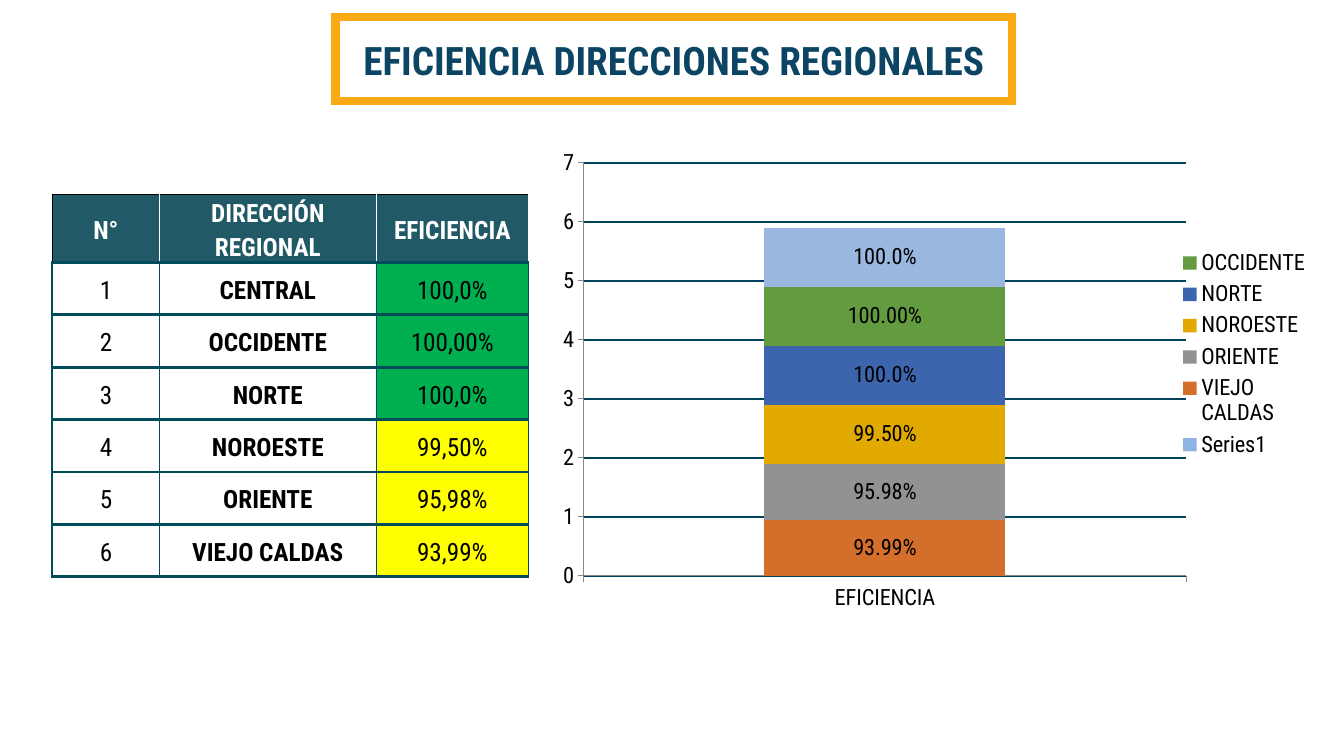
from dataclasses import dataclass

from lxml import etree
from pptx import Presentation
from pptx import util as u
from pptx.chart.data import CategoryChartData
from pptx.dml.color import RGBColor
from pptx.enum import chart as charts, shapes, text
from pptx.oxml import parse_xml
from pptx.oxml.ns import nsdecls, qn


@dataclass(frozen=True)
class Theme:
    """Colours, font and type sizes of the slide."""
    font: str = "Roboto Condensed"
    title_size: int = 28
    table_size: int = 18
    chart_size: int = 16
    title: str = "0C4563"
    frame: str = "F8A913"
    header: str = "215967"
    border: str = "004C5A"
    grid: str = "00415B"
    axis: str = "868686"
    black: str = "000000"
    white: str = "FFFFFF"
    good: str = "00B050"
    fair: str = "FFFF00"


@dataclass(frozen=True)
class Box:
    """A rectangle in centimetres."""
    left: float
    top: float
    width: float
    height: float

    def place(self):
        """Return the four lengths in slide units."""
        return [u.Cm(side) for side in (self.left, self.top, self.width, self.height)]


THEME = Theme()
REGIONS = [
    ("CENTRAL", "100,0%", THEME.good),
    ("OCCIDENTE", "100,00%", THEME.good),
    ("NORTE", "100,0%", THEME.good),
    ("NOROESTE", "99,50%", THEME.fair),
    ("ORIENTE", "95,98%", THEME.fair),
    ("VIEJO CALDAS", "93,99%", THEME.fair),
]
SERIES = [
    ("Series1", None, "8EB4E3", "0.0%"),
    ("VIEJO CALDAS", 0.9399, "D46F2B", "0.00%"),
    ("ORIENTE", 0.9598, "929292", "0.00%"),
    ("NOROESTE", 0.995, "E2AA00", "0.00%"),
    ("NORTE", 1, "3D65AD", "0.0%"),
    ("OCCIDENTE", 1, "629B40", "0.00%"),
    ("CENTRAL", 1, "99B7DF", "0.0%"),
]


def set_font(font, size, color, bold=False):
    """Apply the theme font with a size, colour and weight."""
    font.name, font.size, font.bold = THEME.font, u.Pt(size), bold
    font.color.rgb = RGBColor.from_string(color)


def set_line(line, color, width):
    """Give a line a solid colour and a width in points."""
    line.color.rgb = RGBColor.from_string(color)
    line.width = u.Pt(width)


def add_title(slide, box):
    """Draw the framed title inside the box."""
    frame = slide.shapes.add_shape(shapes.MSO_SHAPE.RECTANGLE, *box.place())
    frame.shadow.inherit = False
    frame.fill.background()
    set_line(frame.line, THEME.frame, 6)
    etree.SubElement(frame.line._ln, qn("a:miter"), lim="800000")

    title = slide.shapes.title
    inner = Box(box.left - 0.5, box.top + 0.45, box.width + 1, 1.4)
    title.left, title.top, title.width, title.height = inner.place()
    title.text_frame.text = "EFICIENCIA DIRECCIONES REGIONALES"
    title.text_frame.auto_size = text.MSO_AUTO_SIZE.NONE
    title.text_frame.vertical_anchor = text.MSO_ANCHOR.MIDDLE
    para = title.text_frame.paragraphs[0]
    para.alignment = text.PP_ALIGN.CENTER
    para.line_spacing = 0.9
    set_font(para.font, THEME.title_size, THEME.title, True)


def set_borders(cell, borders):
    """Draw the left, right, top and bottom borders of a cell."""
    for index, (side, (color, width)) in enumerate(zip("LRTB", borders)):
        cell._tc.get_or_add_tcPr().insert(index, parse_xml(
            f'<a:ln{side} {nsdecls("a")} w="{u.Pt(width)}"><a:solidFill>'
            f'<a:srgbClr val="{color}"/></a:solidFill></a:ln{side}>'))


def fill_cell(cell, content, color, bold, fill, borders):
    """Write and format one table cell."""
    cell.text = content
    cell.vertical_anchor = text.MSO_ANCHOR.MIDDLE
    cell.margin_left = cell.margin_right = u.Cm(0.18)
    cell.margin_top = cell.margin_bottom = 0
    para = cell.text_frame.paragraphs[0]
    para.alignment = text.PP_ALIGN.CENTER
    para.line_spacing = 1.15
    set_font(para.font, THEME.table_size, color, bold)
    if fill:
        cell.fill.solid()
        cell.fill.fore_color.rgb = RGBColor.from_string(fill)
    else:
        cell.fill.background()
    set_borders(cell, borders)


def add_region_table(slide, box):
    """Draw the table of regions and their efficiency."""
    headers = ["N°", "DIRECCIÓN REGIONAL", "EFICIENCIA"]
    table = slide.shapes.add_table(len(REGIONS) + 1, len(headers), *box.place()).table
    table.horz_banding = False
    for column, share in zip(table.columns, (0.225, 0.455, 0.32)):
        column.width = u.Cm(box.width * share)
    for row in table.rows:
        row.height = u.Cm(1.32)
    table.rows[0].height = u.Cm(1.22)

    thin, thick = (THEME.border, 1), (THEME.border, 2.25)
    black, white = (THEME.black, 1), (THEME.white, 1)
    for index, header in enumerate(headers):
        borders = [white if index else black, white, black, thick]
        fill_cell(table.cell(0, index), header, THEME.white, True, THEME.header, borders)
    for number, (region, efficiency, fill) in enumerate(REGIONS, 1):
        for index, content in enumerate((str(number), region, efficiency)):
            left = thin if index else (THEME.border, 1.5)
            fill_cell(table.cell(number, index), content, THEME.black, index == 1,
                      fill if index == 2 else None, [left, thin, thick, thick])


def set_layout(parent, position, left, top, width, height, inner=False):
    """Place a chart part by fractions of the chart area."""
    for old in parent.findall(qn("c:layout")):
        parent.remove(old)
    target = '<c:layoutTarget val="inner"/>' if inner else ""
    sides = zip("xywh", (left, top, width, height))
    parent.insert(position, parse_xml(
        f'<c:layout {nsdecls("c")}><c:manualLayout>{target}'
        '<c:xMode val="edge"/><c:yMode val="edge"/>'
        + "".join(f'<c:{side} val="{size}"/>' for side, size in sides)
        + "</c:manualLayout></c:layout>"))


def add_efficiency_chart(slide, box):
    """Draw the stacked column of efficiency by region."""
    chart_data = CategoryChartData()
    chart_data.categories = ["EFICIENCIA"]
    for name, share, _, number_format in SERIES:
        chart_data.add_series(name, [share], number_format)
    chart = slide.shapes.add_chart(
        charts.XL_CHART_TYPE.COLUMN_STACKED, *box.place(), chart_data).chart
    chart.has_title = False
    set_font(chart.font, THEME.chart_size, THEME.black)

    plot = chart.plots[0]
    plot.gap_width, plot.overlap, plot.vary_by_categories = 150, 100, False
    for series, (_, _, color, number_format) in zip(plot.series, SERIES):
        series.format.fill.solid()
        series.format.fill.fore_color.rgb = RGBColor.from_string(color)
        labels = series.data_labels
        labels.show_value = True
        labels.number_format, labels.number_format_is_linked = number_format, False

    values = chart.value_axis
    values.minimum_scale, values.maximum_scale, values.major_unit = 0, 7, 1
    values.tick_labels.number_format = "General"
    values.tick_labels.number_format_is_linked = False
    set_line(values.major_gridlines.format.line, THEME.grid, 1.25)
    for axis in (values, chart.category_axis):
        axis.major_tick_mark = charts.XL_TICK_MARK.OUTSIDE
        set_line(axis.format.line, THEME.axis, 0.75)

    chart.has_legend = True
    chart.legend.position = charts.XL_LEGEND_POSITION.RIGHT
    chart.legend.include_in_layout = False
    legend = chart.legend._element
    legend.insert(1, parse_xml(
        f'<c:legendEntry {nsdecls("c")}><c:idx val="{len(SERIES) - 1}"/>'
        '<c:delete val="1"/></c:legendEntry>'))
    set_layout(legend, 2, 0.82, 0.22, 0.17, 0.43)
    set_layout(plot._element.getparent(), 0, 0.05, 0.06, 0.78, 0.81, inner=True)


def main():
    """Build the deck and save it."""
    deck = Presentation()
    deck.slide_width, deck.slide_height = u.Cm(33.87), u.Cm(19.05)
    slide = deck.slides.add_slide(deck.slide_layouts[5])
    add_title(slide, Box(8.46, 0.43, 17.04, 2.11))
    add_region_table(slide, Box(1.32, 4.9, 12, 9.14))
    add_efficiency_chart(slide, Box(13.74, 3.33, 19.46, 12.85))
    deck.save("out.pptx")


if __name__ == "__main__":
    main()
